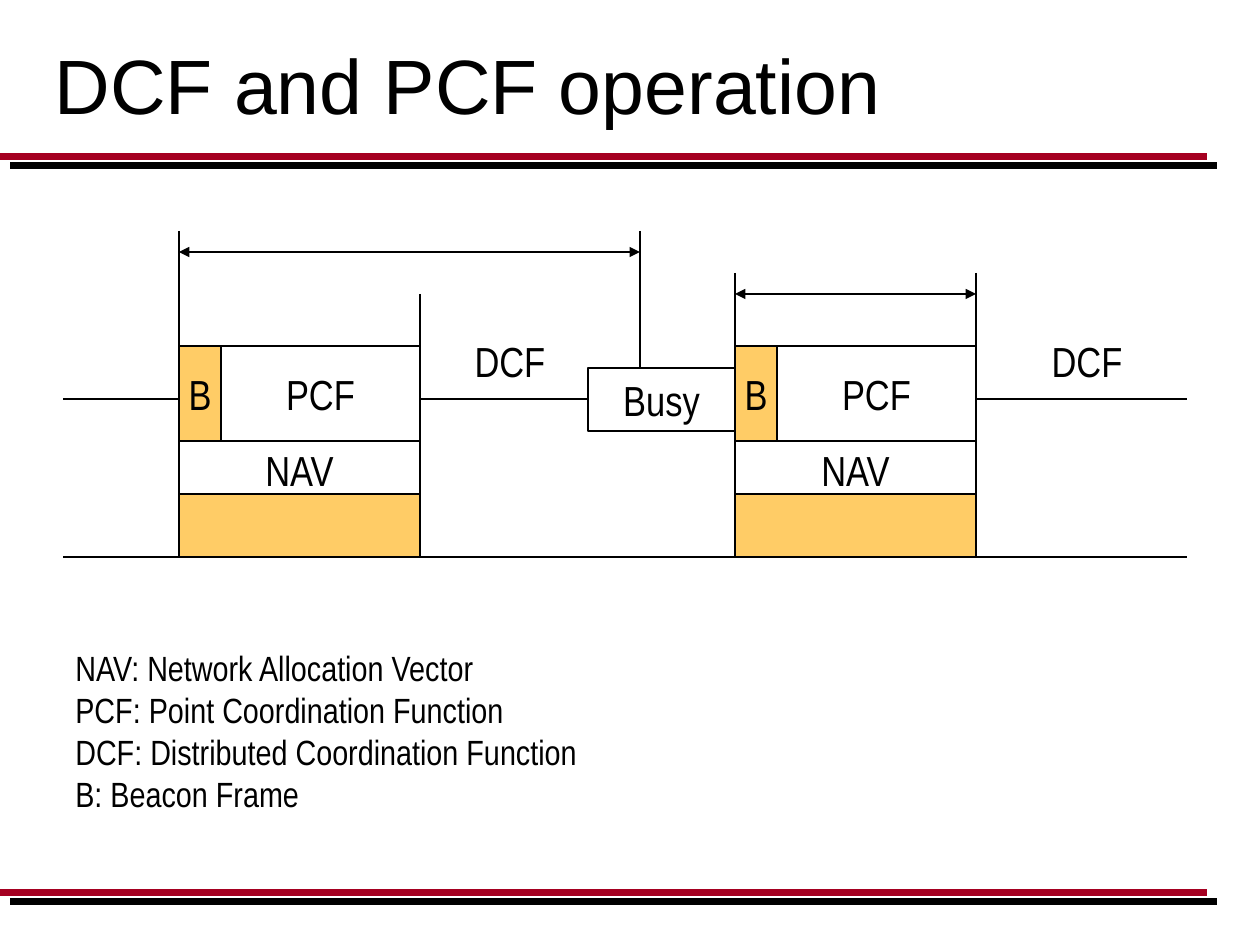
import pptx
import pptx.util
from pptx.dml.color import RGBColor
from pptx.enum.shapes import MSO_CONNECTOR, MSO_SHAPE
from pptx.enum.text import MSO_ANCHOR, PP_ALIGN
from pptx.oxml import parse_xml
from pptx.oxml.ns import nsdecls
from pptx.oxml.xmlchemy import OxmlElement

# Content, in px
TITLE = "DCF and PCF operation"
LEGEND = [
    "NAV: Network Allocation Vector",
    "PCF: Point Coordination Function",
    "DCF: Distributed Coordination Function",
    "B: Beacon Frame",
]
PERIODS = [(179, 231, 294), (735, 273, 273)]  # left, top of start mark, top of end mark
PERIOD_W, BEACON_W, LABEL_W, LABEL_H = 241, 42, 200, 42
FRAME_Y, FRAME_H = 346, 95
NAV_LABEL_Y, NAV_Y, NAV_H = 455, 494, 63
AXIS_LEFT, AXIS_RIGHT, AXES_Y = 63, 1187, (399, 557)
BUSY = (588, 368, 147, 63)
BUSY_MARK = (640, 231, 640, 378)
SPANS = [(179, 640, 252), (735, 976, 294)]  # left, right, y
DCF_LABELS_X = [410, 987]
RULES_Y, RULE_RIGHT = [157, 893], 1207

THEME = {
    "title_font": "Arial", "font": "Arial Narrow",
    "title": 44, "label": 24, "legend": 20, "thin": 0.75, "rule": 4,
    "ink": RGBColor(0, 0, 0), "paper": RGBColor(255, 255, 255),
    "accent": RGBColor(0xFF, 0xCC, 0x66), "red": RGBColor(0xA5, 0x00, 0x21),
}


def px(n):
    return pptx.util.Emu(round(n * 914400 / 126))


def style(p, size, font=THEME["font"], align=PP_ALIGN.LEFT):
    p.alignment = align
    p.font.size = pptx.util.Pt(size)
    p.font.name = font
    p.font.color.rgb = THEME["ink"]


def centre_text(s, text):
    tf = s.text_frame
    tf.word_wrap = False
    tf.vertical_anchor = MSO_ANCHOR.MIDDLE
    p = tf.paragraphs[0]
    p.text = text
    style(p, THEME["label"], align=PP_ALIGN.CENTER)
    return p


def add_box(slide, x, y, w, h, fill, text=""):
    s = slide.shapes.add_shape(MSO_SHAPE.RECTANGLE, px(x), px(y), px(w), px(h))
    s.shadow.inherit = False
    s.fill.solid()
    s.fill.fore_color.rgb = THEME[fill]
    s.line.color.rgb = THEME["ink"]
    s.line.width = pptx.util.Pt(THEME["thin"])
    if text:
        centre_text(s, text)


def add_label(slide, x, y, text):
    s = slide.shapes.add_textbox(px(x), px(y), px(LABEL_W), px(LABEL_H))
    centre_text(s, text).line_spacing = 0.7


def add_line(slide, x1, y1, x2, y2, arrows=False, color="ink", width="thin"):
    s = slide.shapes.add_connector(MSO_CONNECTOR.STRAIGHT, px(x1), px(y1), px(x2), px(y2))
    s.line.color.rgb = THEME[color]
    s.line.width = pptx.util.Pt(THEME[width])
    if arrows:
        ln = s.line._get_or_add_ln()
        for tag in ("a:headEnd", "a:tailEnd"):
            end = OxmlElement(tag)
            end.set("type", "triangle")
            ln.append(end)
    effects = OxmlElement("a:effectLst")
    s._element.spPr.append(effects)
    return effects


def add_rule(slide, y):
    """Draw a red rule with a hard black shadow."""
    effects = add_line(slide, 0, y, RULE_RIGHT, y, color="red", width="rule")
    effects.append(parse_xml(
        f'<a:outerShdw {nsdecls("a")} blurRad="0" dist="99060" dir="2400000" '
        'algn="ctr" rotWithShape="0"><a:srgbClr val="000000"/></a:outerShdw>'))


def add_period(slide, x):
    add_box(slide, x, NAV_Y, PERIOD_W, NAV_H, "accent")
    add_label(slide, x + (PERIOD_W - LABEL_W) / 2, NAV_LABEL_Y, "NAV")
    add_box(slide, x, FRAME_Y, BEACON_W, FRAME_H, "accent", "B")
    add_box(slide, x + BEACON_W, FRAME_Y, PERIOD_W - BEACON_W, FRAME_H, "paper", "PCF")


def add_legend(slide):
    tf = slide.shapes.add_textbox(px(63), px(640), px(829), px(180)).text_frame
    tf.word_wrap = True
    for i, line in enumerate(LEGEND):
        p = tf.add_paragraph() if i else tf.paragraphs[0]
        p.text = line
        style(p, THEME["legend"])


def main():
    prs = pptx.Presentation()
    prs.slide_width, prs.slide_height = px(1260), px(945)
    slide = prs.slides.add_slide(prs.slide_layouts[5])

    title = slide.shapes.title
    title.left, title.top, title.width, title.height = px(42), px(0), px(1155), px(168)
    title.text_frame.text = TITLE
    title.text_frame.vertical_anchor = MSO_ANCHOR.MIDDLE
    style(title.text_frame.paragraphs[0], THEME["title"], THEME["title_font"])

    for y in RULES_Y:
        add_rule(slide, y)
    for y in AXES_Y:
        add_line(slide, AXIS_LEFT, y, AXIS_RIGHT, y)
    for x, start_top, end_top in PERIODS:
        add_line(slide, x, start_top, x, AXES_Y[1])
        add_line(slide, x + PERIOD_W, end_top, x + PERIOD_W, AXES_Y[1])
        add_period(slide, x)
    add_line(slide, *BUSY_MARK)
    for left, right, y in SPANS:
        add_line(slide, left, y, right, y, arrows=True)
    add_box(slide, *BUSY, "paper", "Busy")
    for x in DCF_LABELS_X:
        add_label(slide, x, FRAME_Y, "DCF")
    add_legend(slide)
    prs.save("out.pptx")


if __name__ == "__main__":
    main()
